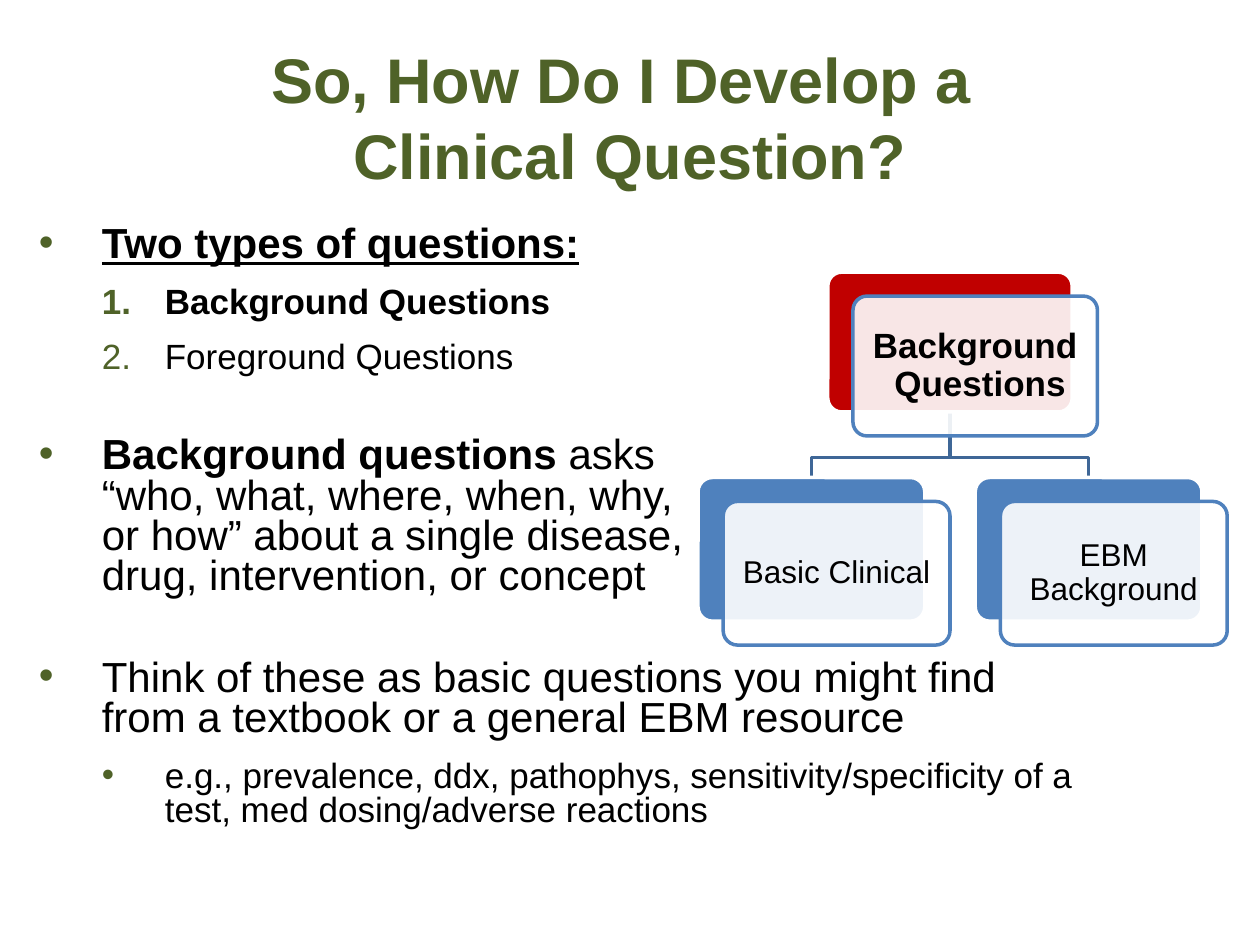
"""Build the slide on developing a clinical question."""
import dataclasses

import lxml.etree
import pptx
import pptx.dml.color
import pptx.enum.shapes
import pptx.enum.text
import pptx.oxml.ns
import pptx.util

Inches = pptx.util.Inches
Pt = pptx.util.Pt
qn = pptx.oxml.ns.qn


@dataclasses.dataclass(frozen=True)
class Theme:
    font: str = "Arial"
    green: str = "4F6228"
    black: str = "000000"
    white: str = "FFFFFF"
    red: str = "C00000"
    blue: str = "4F81BD"
    link: str = "3F6797"
    title: int = 36
    point: int = 24
    detail: int = 20
    leaf: int = 18
    outline: int = 2
    gap: int = 12
    section_gap: int = 35


THEME = Theme()
BULLET = ("a:buChar", "char", "•")
NUMBER = ("a:buAutoNum", "type", "arabicPeriod")


def rgb(value):
    return pptx.dml.color.RGBColor.from_string(value)


def add_text(para, text, size, color=THEME.black, bold=False, underline=False):
    for index, line in enumerate(text.split("\n")):
        if index:
            para.add_line_break()
        span = para.add_run()
        span.text = line
        span.font.name = THEME.font
        span.font.size = Pt(size)
        span.font.color.rgb = rgb(color)
        span.font.bold = bold
        span.font.underline = underline


def add_marker(para, marker, level):
    tag, attribute, value = marker
    props = para._p.get_or_add_pPr()
    props.set("marL", str(Inches(0.5 * (level + 1))))
    props.set("indent", str(Inches(-0.5)))
    color = lxml.etree.SubElement(props, qn("a:buClr"))
    lxml.etree.SubElement(color, qn("a:srgbClr")).set("val", THEME.green)
    lxml.etree.SubElement(props, qn("a:buFont")).set("typeface", THEME.font)
    lxml.etree.SubElement(props, qn(tag)).set(attribute, value)


def add_title(page, text):
    box = page.shapes.title
    box.left, box.top = Inches(0.5), Inches(0.3)
    box.width, box.height = Inches(9), Inches(1.25)
    box.text_frame.vertical_anchor = pptx.enum.text.MSO_ANCHOR.MIDDLE
    para = box.text_frame.paragraphs[0]
    para.alignment = pptx.enum.text.PP_ALIGN.CENTER
    add_text(para, text, THEME.title, THEME.green, bold=True)


def add_outline(page, items):
    box = page.shapes.add_textbox(Inches(0.21), Inches(1.75), Inches(8.49), Inches(4.76))
    frame = box.text_frame
    frame.word_wrap = True
    for index, (level, marker, after, spans) in enumerate(items):
        para = frame.add_paragraph() if index else frame.paragraphs[0]
        para.level = level
        add_marker(para, marker, level)
        para.line_spacing = 0.8
        para.space_after = Pt(after)
        size = THEME.detail if level else THEME.point
        for text, style in spans:
            add_text(para, text, size, **style)


def add_panel(page, left, top, width, height, fill, line, opacity=100):
    panel = page.shapes.add_shape(
        pptx.enum.shapes.MSO_SHAPE.ROUNDED_RECTANGLE,
        Inches(left), Inches(top), Inches(width), Inches(height))
    panel.adjustments[0] = 0.1
    panel.shadow.inherit = False
    panel.fill.solid()
    panel.fill.fore_color.rgb = rgb(fill)
    panel.line.color.rgb = rgb(line)
    panel.line.width = Pt(THEME.outline)
    if opacity < 100:
        color = panel.fill._xPr.find(qn("a:solidFill")).find(qn("a:srgbClr"))
        lxml.etree.SubElement(color, qn("a:alpha")).set("val", str(opacity * 1000))
    return panel


def add_node(page, left, top, width, height, text, fill, size, bold=False):
    add_panel(page, left, top, width, height, fill, THEME.white)
    card = add_panel(page, left + 0.2, top + 0.19, width, height,
                     THEME.white, THEME.blue, opacity=90)
    frame = card.text_frame
    frame.word_wrap = True
    frame.vertical_anchor = pptx.enum.text.MSO_ANCHOR.MIDDLE
    frame.margin_left = frame.margin_right = Inches(0.11)
    frame.margin_top = frame.margin_bottom = Inches(0.11)
    para = frame.paragraphs[0]
    para.alignment = pptx.enum.text.PP_ALIGN.CENTER
    para.line_spacing = 0.9
    add_text(para, text, size, bold=bold)


def add_branch(page, start_x, end_x, top, bend, bottom):
    builder = page.shapes.build_freeform(Inches(start_x), Inches(top))
    corners = [(start_x, bend), (end_x, bend), (end_x, bottom)]
    builder.add_line_segments([(Inches(x), Inches(y)) for x, y in corners], close=False)
    branch = builder.convert_to_shape()
    branch.shadow.inherit = False
    branch.fill.background()
    branch.line.color.rgb = rgb(THEME.link)
    branch.line.width = Pt(THEME.outline)


def add_question_tree(page):
    root_left, root_top, root_width, root_height = 6.57, 2.16, 1.94, 1.11
    leaf_top, leaf_width, leaf_height = 3.79, 1.8, 1.14
    leaves = [(5.54, "Basic Clinical"), (7.74, "EBM Background")]
    for left, _ in reversed(leaves):
        add_branch(page, root_left + root_width / 2, left + leaf_width / 2,
                   root_top + root_height, 3.63, leaf_top)
    add_node(page, root_left, root_top, root_width, root_height,
             "Background\n Questions", THEME.red, THEME.detail, bold=True)
    for left, text in leaves:
        add_node(page, left, leaf_top, leaf_width, leaf_height,
                 text, THEME.blue, THEME.leaf)


def main():
    deck = pptx.Presentation()
    deck.slide_width, deck.slide_height = Inches(10), Inches(7.5)
    page = deck.slides.add_slide(deck.slide_layouts.get_by_name("Title Only"))
    add_title(page, "So, How Do I Develop a \nClinical Question?")
    strong = {"bold": True}
    add_outline(page, [
        (0, BULLET, THEME.gap,
         [("Two types of questions:", {"bold": True, "underline": True})]),
        (1, NUMBER, THEME.gap, [("Background Questions", strong)]),
        (1, NUMBER, THEME.section_gap, [("Foreground Questions", {})]),
        (0, BULLET, THEME.section_gap,
         [("Background questions ", strong),
          ("asks\n“who, what, where, when, why,\nor how” about a single disease,\n"
           "drug, intervention, or concept", {})]),
        (0, BULLET, THEME.gap,
         [("Think of these as basic questions you might find from a textbook "
           "or a general EBM resource", {})]),
        (1, BULLET, THEME.gap,
         [("e.g., prevalence, ddx, pathophys, sensitivity/specificity of a test, "
           "med dosing/adverse reactions", {})]),
    ])
    add_question_tree(page)
    deck.save("out.pptx")


if __name__ == "__main__":
    main()
